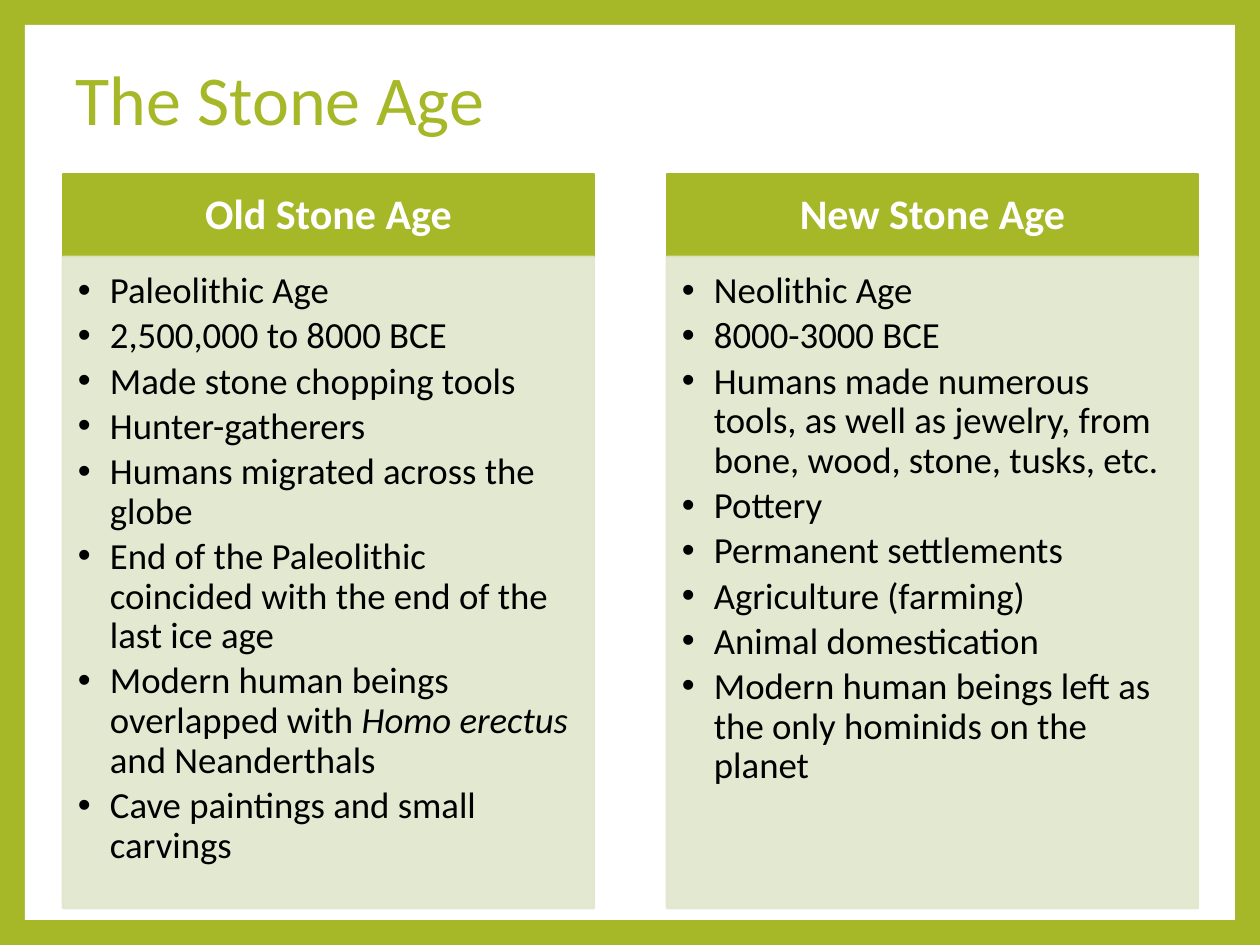
from lxml import etree
from pptx import Presentation
from pptx.dml.color import RGBColor
from pptx.enum.shapes import MSO_SHAPE
from pptx.enum.text import MSO_ANCHOR, PP_ALIGN
from pptx.oxml.ns import qn
from pptx.util import Emu, Pt

RECT = MSO_SHAPE.RECTANGLE
TOP, MIDDLE = MSO_ANCHOR.TOP, MSO_ANCHOR.MIDDLE
LEFT, CENTER = PP_ALIGN.LEFT, PP_ALIGN.CENTER
EMU_PER_PX = 914400 / 126
FONT = "Calibri"
COLORS = {"green": "A6B727", "pale": "E1E6CD", "white": "FFFFFF", "black": "000000"}
COLUMN_LEFTS = (63, 667)
COLUMN_WIDTH = 531
HEADER_TOP, HEADER_HEIGHT = 174, 83
BODY_TOP, BODY_HEIGHT = HEADER_TOP + HEADER_HEIGHT, 651

AGES = [
    ("Old Stone Age", [
        ["Paleolithic Age"],
        ["2,500,000 to 8000 BCE"],
        ["Made stone chopping tools"],
        ["Hunter-gatherers"],
        ["Humans migrated across the globe"],
        ["End of the Paleolithic coincided with the end of the last ice age"],
        ["Modern human beings overlapped with ", ("Homo erectus", True), " and Neanderthals"],
        ["Cave paintings and small carvings"],
    ]),
    ("New Stone Age", [
        ["Neolithic Age"],
        ["8000-3000 BCE"],
        ["Humans made numerous tools, as well as jewelry, from bone, wood, stone, tusks, etc."],
        ["Pottery"],
        ["Permanent settlements"],
        ["Agriculture (farming)"],
        ["Animal domestication"],
        ["Modern human beings left as the only hominids on the planet"],
    ]),
]


def px(length):
    return Emu(round(length * EMU_PER_PX))


def rgb(name):
    return RGBColor.from_string(COLORS[name])


class SlideBuilder:
    """Holds the slide and its style, with a method for each kind of element."""

    def __init__(self, deck):
        self.slide = deck.slides.add_slide(deck.slide_layouts[6])

    def background(self, color):
        fill = self.slide.background.fill
        fill.solid()
        fill.fore_color.rgb = rgb(color)

    def panel(self, box, color, outlined=True, opacity=100):
        panel = self.slide.shapes.add_shape(RECT, *map(px, box))
        panel.shadow.inherit = False
        panel.fill.solid()
        panel.fill.fore_color.rgb = rgb(color)
        if outlined:
            panel.line.color.rgb = rgb(color)
            panel.line.width = Pt(1.5)
        else:
            panel.line.fill.background()
        if opacity < 100:
            for tint in panel._element.spPr.iter(qn("a:srgbClr")):
                etree.SubElement(tint, qn("a:alpha")).set("val", str(opacity * 1000))
        return panel.text_frame

    def frame(self, frame, insets, anchor):
        frame.word_wrap = True
        frame.vertical_anchor = anchor
        (frame.margin_left, frame.margin_top,
         frame.margin_right, frame.margin_bottom) = map(px, insets)

    def paragraph(self, paragraph, parts, size, color, align=LEFT, bold=False, after=0):
        paragraph.alignment = align
        paragraph.line_spacing = 0.9
        paragraph.space_after = Pt(after)
        for part in parts:
            text, italic = (part, False) if isinstance(part, str) else part
            run = paragraph.add_run()
            run.text = text
            run.font.name = FONT
            run.font.size = Pt(size)
            run.font.bold = bold
            run.font.italic = italic
            run.font.color.rgb = rgb(color)

    def title(self, box, text):
        frame = self.slide.shapes.add_textbox(*map(px, box)).text_frame
        self.frame(frame, (13, 6, 13, 6), MIDDLE)
        self.paragraph(frame.paragraphs[0], [text], 40, "green")

    def header(self, box, text):
        frame = self.panel(box, "green")
        self.frame(frame, (24, 14, 24, 14), MIDDLE)
        self.paragraph(frame.paragraphs[0], [text], 24, "white", CENTER, bold=True)

    def bullets(self, box, items):
        frame = self.panel(box, "pale", opacity=90)
        self.frame(frame, (15, 15, 20, 23), TOP)
        for index, parts in enumerate(items):
            item = frame.add_paragraph() if index else frame.paragraphs[0]
            item.level = 1
            self.paragraph(item, parts, 21, "black", after=3.15)
            properties = item._p.get_or_add_pPr()
            properties.set("marL", str(px(32)))
            properties.set("indent", str(px(-32)))
            etree.SubElement(properties, qn("a:buFont")).set("typeface", "Arial")
            etree.SubElement(properties, qn("a:buChar")).set("char", "•")


def main():
    deck = Presentation()
    deck.slide_width, deck.slide_height = px(1260), px(945)
    builder = SlideBuilder(deck)
    builder.background("green")
    builder.panel((25, 25, 1210, 895), "white", outlined=False)
    builder.title((63, 38, 1134, 130), "The Stone Age")
    for left, (age, facts) in zip(COLUMN_LEFTS, AGES):
        builder.header((left, HEADER_TOP, COLUMN_WIDTH, HEADER_HEIGHT), age)
        builder.bullets((left, BODY_TOP, COLUMN_WIDTH, BODY_HEIGHT), facts)
    deck.save("out.pptx")


if __name__ == "__main__":
    main()
